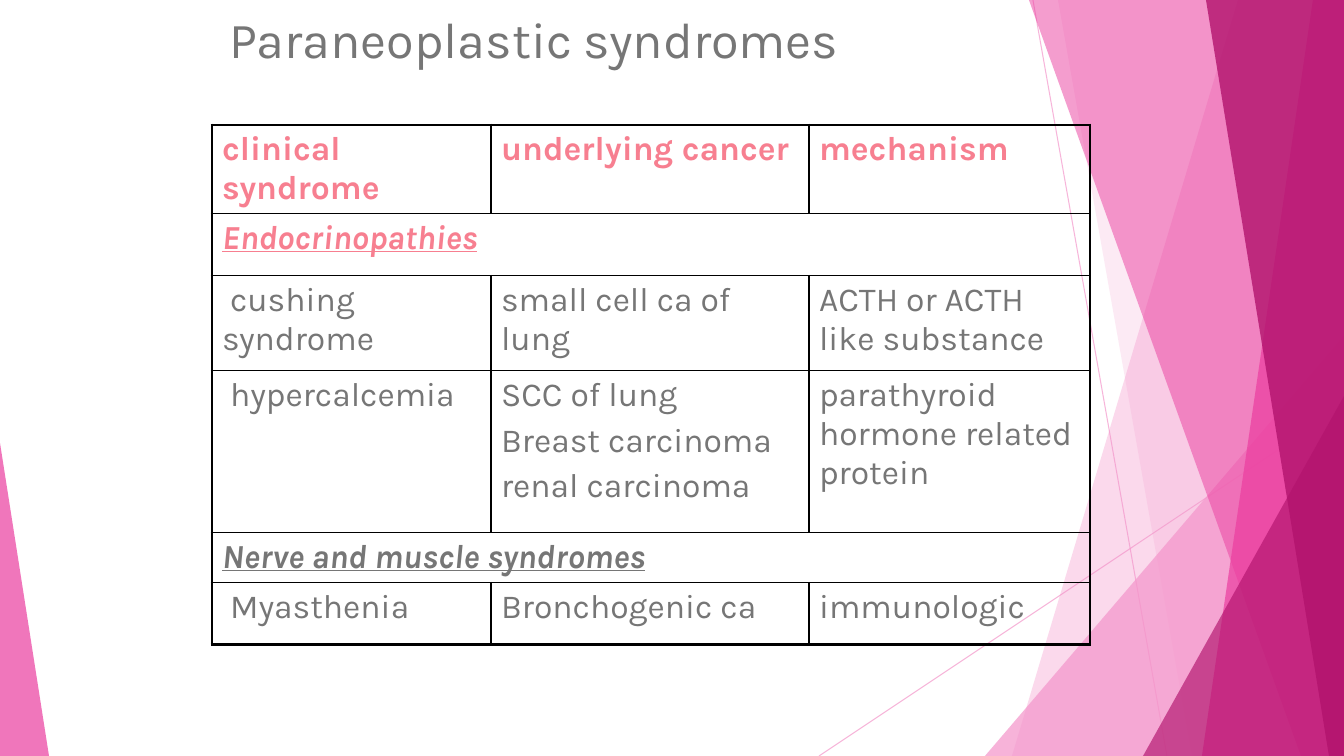
from dataclasses import dataclass

from lxml.etree import SubElement
from pptx import Presentation
from pptx.dml.color import RGBColor
from pptx.enum.shapes import MSO_CONNECTOR, MSO_SHAPE
from pptx.enum.text import MSO_ANCHOR, MSO_AUTO_SIZE, PP_ALIGN
from pptx.oxml.ns import qn
from pptx.util import Emu, Pt

SCALE = 914400 / 100.8
W, H = 1344, 756
FONT = "Karla"
GREY, CORAL, BLACK = "767676", "F77F90", "000000"
PINK, MAGENTA, PLUM = "F496CB", "EB3D9F", "B2136D"
SPACE = 4.8
INDENT = 8


@dataclass(frozen=True)
class Ray:
    start: tuple[int, int]
    end: tuple[int, int]


@dataclass(frozen=True)
class Band:
    top: int
    bottom: int
    color: str
    alpha: int


@dataclass(frozen=True)
class Wedge:
    left: int
    top: int
    width: int
    apex: int
    color: str
    alpha: int


@dataclass(frozen=True)
class Row:
    height: int
    cells: tuple[str, ...]
    color: str = GREY
    bold: bool = False
    indent: int = 0

    @property
    def section(self) -> bool:
        return len(self.cells) == 1


RAYS = [Ray((1033, 0), (1167, H)), Ray((W, 406), (819, H))]
FACETS = [
    Band(1238, 1012, PINK, 36),
    Band(1058, 1192, PINK, 20),
    Wedge(985, 336, 359, 1, PINK, 72),
    Band(1029, 1301, MAGENTA, 50),
    Band(1313, 1202, MAGENTA, 70),
    Band(1206, 1329, PLUM, 80),
    Wedge(1143, 396, 201, 1, PLUM, 66),
    Wedge(0, 443, 49, 0, MAGENTA, 70),
]
COLUMNS = [279, 318, 281]
ROWS = [
    Row(50, ("clinical syndrome", "underlying cancer", "mechanism"), CORAL, True),
    Row(62, ("Endocrinopathies",), CORAL, True),
    Row(95, ("cushing syndrome", "small cell ca of lung",
             "ACTH or ACTH like substance"), indent=INDENT),
    Row(162, ("hypercalcemia", "SCC of lung\nBreast carcinoma\nrenal carcinoma",
              "parathyroid hormone related protein"), indent=INDENT),
    Row(50, ("Nerve and muscle syndromes",), GREY, True),
    Row(62, ("Myasthenia", "Bronchogenic ca", "immunologic"), indent=INDENT),
]


def px(n: int) -> Emu:
    return Emu(round(n * SCALE))


def rgb(color: str) -> RGBColor:
    return RGBColor.from_string(color)


def set_alpha(parent, alpha: int) -> None:
    clr = next(parent.iter(qn("a:srgbClr")))
    SubElement(clr, qn("a:alpha"), val=str(alpha * 1000))


def draw_ray(slide, ray: Ray) -> None:
    sp = slide.shapes.add_connector(
        MSO_CONNECTOR.STRAIGHT, *map(px, ray.start + ray.end))
    sp.line.color.rgb = rgb(PINK)
    sp.line.width = Pt(0.75)
    spPr = sp._element.spPr
    set_alpha(spPr, 70)
    SubElement(spPr, qn("a:effectLst"))


def draw_facet(slide, facet: Band | Wedge) -> None:
    if isinstance(facet, Band):
        fb = slide.shapes.build_freeform(facet.top, 0, scale=SCALE)
        fb.add_line_segments([(W, 0), (W, H), (facet.bottom, H)])
        sp = fb.convert_to_shape()
    else:
        sp = slide.shapes.add_shape(
            MSO_SHAPE.ISOSCELES_TRIANGLE, px(facet.left), px(facet.top),
            px(facet.width), px(H - facet.top))
        sp.adjustments[0] = facet.apex
    sp.shadow.inherit = False
    sp.fill.solid()
    sp.fill.fore_color.rgb = rgb(facet.color)
    set_alpha(sp._element.spPr, facet.alpha)
    sp.line.fill.background()


def style_font(p, size: int, color: str) -> None:
    p.font.name = FONT
    p.font.size = Pt(size)
    p.font.color.rgb = rgb(color)


def draw_title(slide, text: str) -> None:
    sp = slide.shapes.title
    sp.left, sp.top, sp.width, sp.height = px(219), px(0), px(771), px(77)
    tf = sp.text_frame
    tf.text = text
    tf.word_wrap = True
    tf.auto_size = MSO_AUTO_SIZE.NONE
    tf.vertical_anchor = MSO_ANCHOR.MIDDLE
    p = tf.paragraphs[0]
    p.alignment = PP_ALIGN.LEFT
    style_font(p, 36, GREY)


def set_border(cell, side: str, width: float) -> None:
    ln = SubElement(cell._tc.get_or_add_tcPr(), qn(f"a:ln{side}"), w=str(Pt(width)))
    fill = SubElement(ln, qn("a:solidFill"))
    SubElement(fill, qn("a:srgbClr"), val=BLACK)


def set_borders(cell, r: int, c: int, section: bool) -> None:
    last = len(COLUMNS) - 1
    outer = {"L": c == 0, "R": c == last or (section and c == 0),
             "T": r == 0, "B": r == len(ROWS) - 1}
    for side, thick in outer.items():
        if thick or side in "TB" or not section:
            set_border(cell, side, 2.25 if thick else 1)


def fill_cell(cell, text: str, row: Row, indent: int) -> None:
    tf = cell.text_frame
    tf.text = text
    for i, p in enumerate(tf.paragraphs):
        if indent:
            pPr = p._p.get_or_add_pPr()
            pPr.set("marL", "0")
            pPr.set("indent", str(px(indent)))
        p.space_before = Pt(SPACE if i else 0)
        style_font(p, 24, row.color)
        p.font.bold = row.bold
        p.font.italic = p.font.underline = row.section


def draw_table(slide) -> None:
    heights = [row.height for row in ROWS]
    table = slide.shapes.add_table(
        len(ROWS), len(COLUMNS), px(212), px(125),
        px(sum(COLUMNS)), px(sum(heights))).table
    table.first_row = table.horz_banding = False
    for column, width in zip(table.columns, COLUMNS):
        column.width = px(width)
    for r, row in enumerate(ROWS):
        table.rows[r].height = px(row.height)
        if row.section:
            table.cell(r, 0).merge(table.cell(r, len(COLUMNS) - 1))
        for c in range(len(COLUMNS)):
            cell = table.cell(r, c)
            set_borders(cell, r, c, row.section)
            cell.fill.background()
        for c, text in enumerate(row.cells):
            fill_cell(table.cell(r, c), text, row, 0 if c else row.indent)


def main() -> None:
    prs = Presentation()
    prs.slide_width, prs.slide_height = px(W), px(H)
    slide = prs.slides.add_slide(prs.slide_layouts[5])
    for ray in RAYS:
        draw_ray(slide, ray)
    for facet in FACETS:
        draw_facet(slide, facet)
    draw_title(slide, "Paraneoplastic syndromes")
    draw_table(slide)
    prs.save("out.pptx")


if __name__ == "__main__":
    main()
